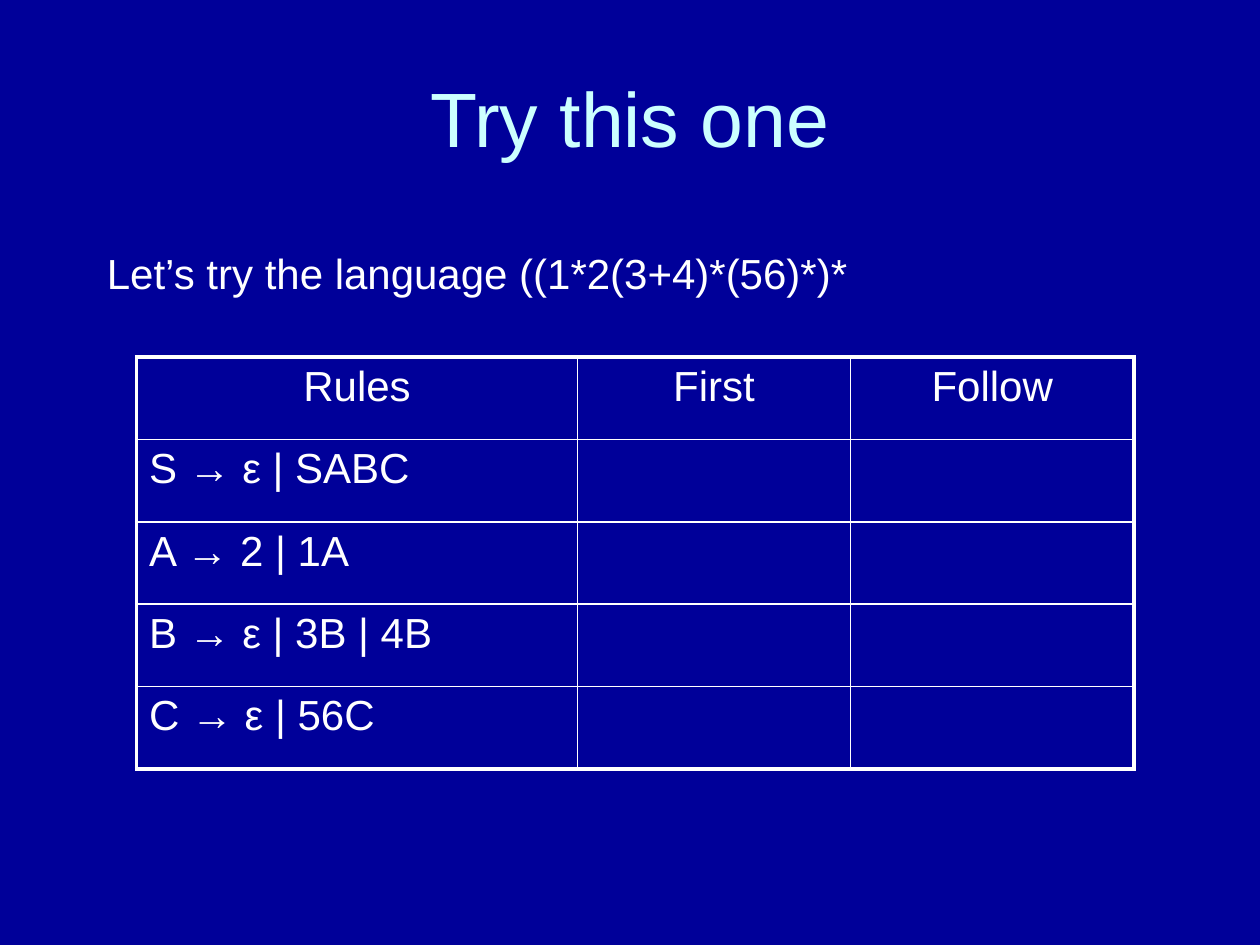
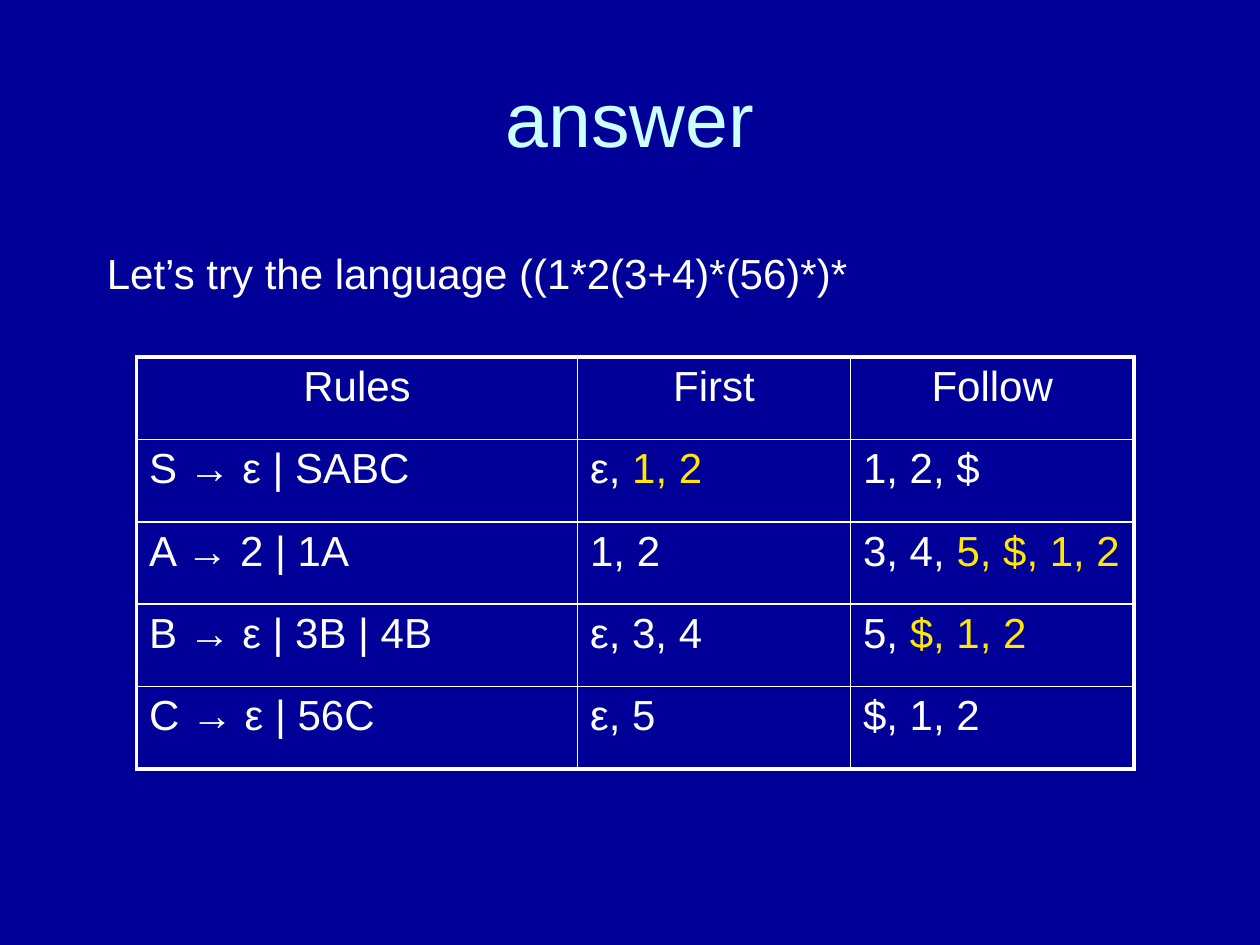
from dataclasses import dataclass

from lxml.etree import SubElement
from pptx import Presentation
from pptx.dml.color import RGBColor
from pptx.enum.text import MSO_ANCHOR as Anchor, MSO_AUTO_SIZE as AutoSize, PP_ALIGN as Align
from pptx.oxml.ns import qn
from pptx.slide import Slide
from pptx.table import _Cell as Cell
from pptx.text.text import TextFrame
from pptx.util import Pt

NAVY = "000099"
PALE_CYAN = "CCFFFF"
WHITE = "FFFFFF"
YELLOW = "FFE701"
FONT = "Arial"

QUESTION = "Let’s try the language ((1*2(3+4)*(56)*)*"
HEADINGS = ("Rules", "First", "Follow")
RULES = ("S → ε | SABC", "A → 2 | 1A", "B → ε | 3B | 4B", "C → ε | 56C")
COLUMN_WIDTHS = (252, 156, 162)
ROW_HEIGHT = 47.1
OUTER_LINE, INNER_LINE = 2.25, 1


@dataclass(frozen=True)
class Symbols:
    direct: str = ""
    derived: str = ""


@dataclass(frozen=True)
class Exercise:
    title: str
    question_width: float
    first: tuple[Symbols, ...]
    follow: tuple[Symbols, ...]


UNSOLVED = (Symbols(),) * len(RULES)
EXERCISES = (
    Exercise("Try this one", 528, UNSOLVED, UNSOLVED),
    Exercise(
        "answer",
        522,
        (Symbols("ε, ", "1, 2"), Symbols("1, 2"), Symbols("ε, 3, 4"), Symbols("ε, 5")),
        (
            Symbols("1, 2, $"),
            Symbols("3, 4, ", "5, $, 1, 2"),
            Symbols("5, ", "$, 1, 2"),
            Symbols("$, 1, 2"),
        ),
    ),
)


def rgb(color: str) -> RGBColor:
    return RGBColor.from_string(color)


def write(frame: TextFrame, text: str, *, size: float = 24, color: str = WHITE,
          align: Align = Align.LEFT, before_percent: int = 0) -> None:
    paragraph = frame.paragraphs[0]
    paragraph.alignment = align
    properties = paragraph._p.get_or_add_pPr()
    if before_percent and properties.find(qn("a:spcBef")) is None:
        spacing = SubElement(properties, qn("a:spcBef"))
        SubElement(spacing, qn("a:spcPct"), val=str(before_percent * 1000))
    run = paragraph.add_run()
    run.text = text
    run.font.name = FONT
    run.font.size = Pt(size)
    run.font.color.rgb = rgb(color)


def add_text_frame(slide: Slide, left: float, top: float, width: float, height: float) -> TextFrame:
    frame = slide.shapes.add_textbox(Pt(left), Pt(top), Pt(width), Pt(height)).text_frame
    frame.word_wrap = True
    return frame


def add_border(cell: Cell, side: str, width: float) -> None:
    line = SubElement(cell._tc.get_or_add_tcPr(), qn(f"a:{side}"), w=str(Pt(width)))
    fill = SubElement(line, qn("a:solidFill"))
    SubElement(fill, qn("a:srgbClr"), val=WHITE)


def add_rules_table(slide: Slide, exercise: Exercise) -> None:
    headings = tuple(Symbols(heading) for heading in HEADINGS)
    rules = tuple(Symbols(rule) for rule in RULES)
    rows = (headings, *zip(rules, exercise.first, exercise.follow))
    last_row, last_column = len(rows) - 1, len(HEADINGS) - 1
    table = slide.shapes.add_table(
        len(rows), len(HEADINGS), Pt(78), Pt(204),
        Pt(sum(COLUMN_WIDTHS)), Pt(ROW_HEIGHT * len(rows)),
    ).table
    table.first_row = table.horz_banding = False
    for column, width in zip(table.columns, COLUMN_WIDTHS):
        column.width = Pt(width)
    for row_index, row in enumerate(rows):
        table.rows[row_index].height = Pt(ROW_HEIGHT)
        for column_index, symbols in enumerate(row):
            cell = table.cell(row_index, column_index)
            outer_sides = {
                "lnL": column_index == 0,
                "lnR": column_index == last_column,
                "lnT": row_index == 0,
                "lnB": row_index == last_row,
            }
            for side, is_outer in outer_sides.items():
                add_border(cell, side, OUTER_LINE if is_outer else INNER_LINE)
            cell.fill.background()
            align = Align.CENTER if row_index == 0 else Align.LEFT
            for text, color in ((symbols.direct, WHITE), (symbols.derived, YELLOW)):
                if text:
                    write(cell.text_frame, text, color=color, align=align, before_percent=20)


def add_exercise(deck: Presentation, exercise: Exercise) -> None:
    slide = deck.slides.add_slide(deck.slide_layouts[6])
    slide.background.fill.solid()
    slide.background.fill.fore_color.rgb = rgb(NAVY)
    title = add_text_frame(slide, 36, 21.6, 648, 90)
    title.vertical_anchor = Anchor.MIDDLE
    write(title, exercise.title, size=44, color=PALE_CYAN, align=Align.CENTER)
    add_rules_table(slide, exercise)
    question = add_text_frame(slide, 54, 138, exercise.question_width, 36)
    question.auto_size = AutoSize.SHAPE_TO_FIT_TEXT
    write(question, QUESTION, before_percent=50)


def main() -> None:
    deck = Presentation()
    deck.slide_width, deck.slide_height = Pt(720), Pt(540)
    for exercise in EXERCISES:
        add_exercise(deck, exercise)
    deck.save("out.pptx")


if __name__ == "__main__":
    main()
